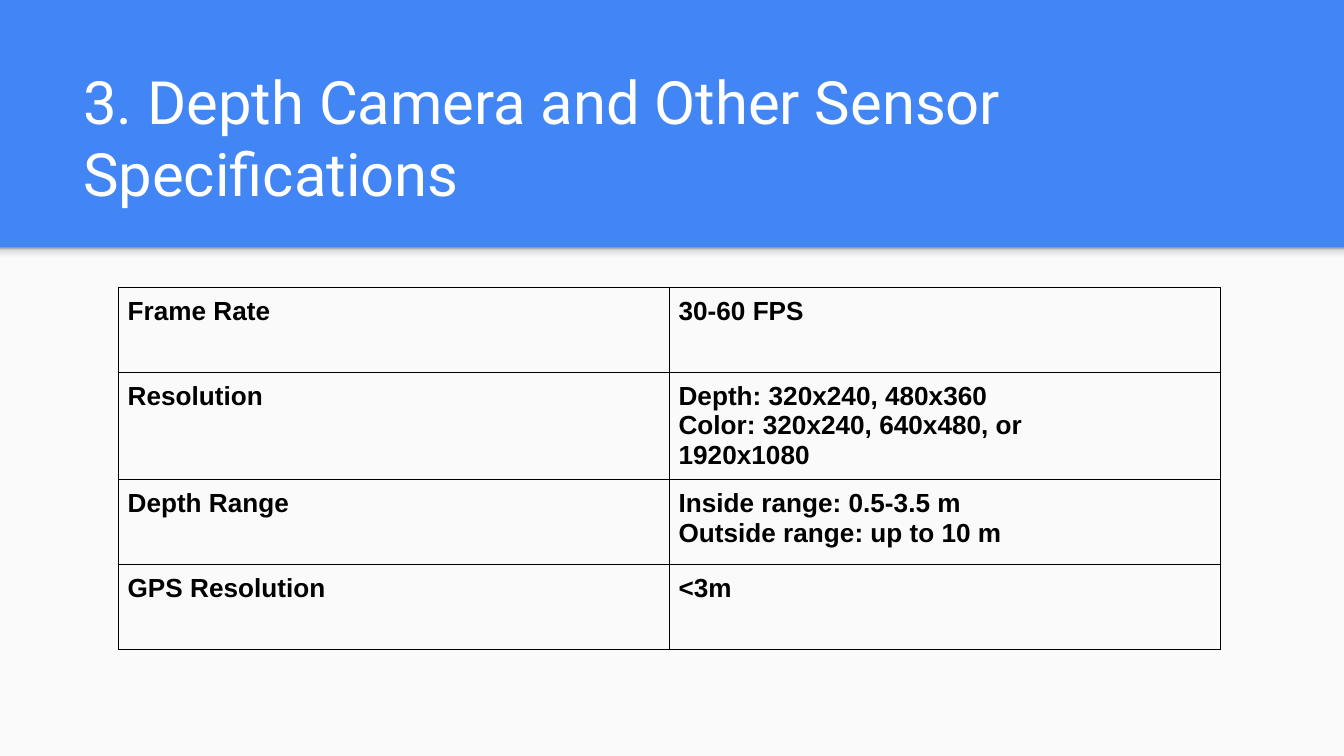
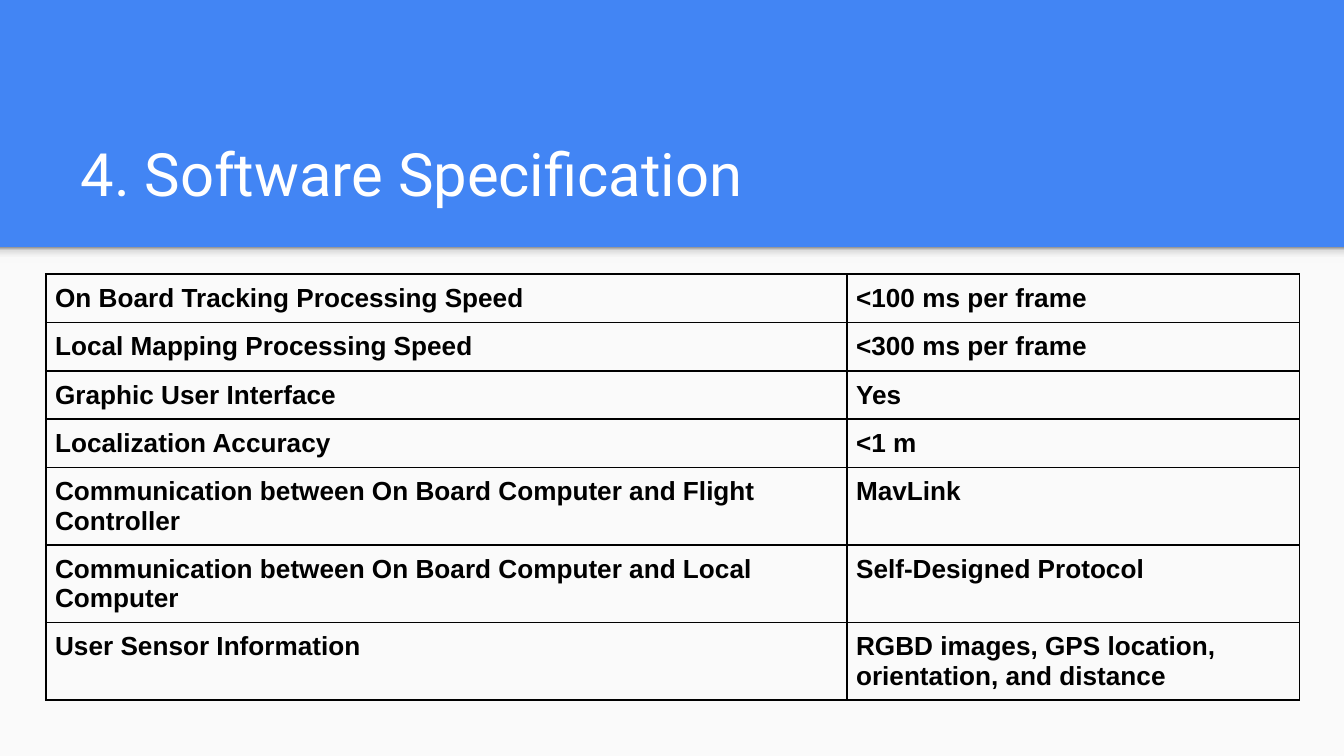
from lxml import etree
from pptx import Presentation
from pptx.dml.color import RGBColor
from pptx.enum.shapes import MSO_SHAPE
from pptx.enum.text import MSO_ANCHOR, MSO_AUTO_SIZE, PP_ALIGN
from pptx.oxml.ns import qn
from pptx.util import Inches, Pt

BLUE = RGBColor(0x42, 0x85, 0xF4)
PAPER = RGBColor(0xFA, 0xFA, 0xFA)
WHITE = RGBColor(0xFF, 0xFF, 0xFF)
BLACK = RGBColor(0x00, 0x00, 0x00)
SHADOW_STOPS = [
    (0, RGBColor(0xF9, 0xF9, 0xF9)),
    (36, RGBColor(0xF9, 0xF9, 0xF9)),
    (80, RGBColor(0xDE, 0xDE, 0xDE)),
    (100, RGBColor(0x99, 0x99, 0x99)),
]

WIDTH = 10
HEIGHT = WIDTH * 9 / 16
BAND_HEIGHT = 1.84
SHORT_ROW, TALL_ROW = 0.36, 0.57

SLIDES = [
    {
        "title": "3. Depth Camera and Other Sensor Specifications",
        "title_left": 0.52,
        "table_at": (0.88, 2.14),
        "columns": (4.1, 4.1),
        "row_heights": (0.63, 0.8, 0.63, 0.63),
        "border": 0.75,
        "rows": [
            ("Frame Rate", "30-60 FPS"),
            ("Resolution", "Depth: 320x240, 480x360\nColor: 320x240, 640x480, or\v1920x1080"),
            ("Depth Range", "Inside range: 0.5-3.5 m\nOutside range: up to 10 m"),
            ("GPS Resolution", "<3m"),
        ],
    },
    {
        "title": "4. Software Specification",
        "title_left": 0.5,
        "table_at": (0.34, 2.04),
        "columns": (5.96, 3.37),
        "row_heights": (SHORT_ROW,) * 4 + (TALL_ROW,) * 3,
        "border": 1,
        "rows": [
            ("On Board Tracking Processing Speed", "<100 ms per frame"),
            ("Local Mapping Processing Speed", "<300 ms per frame"),
            ("Graphic User Interface", "Yes"),
            ("Localization Accuracy", "<1 m"),
            ("Communication between On Board Computer and Flight Controller", "MavLink"),
            ("Communication between On Board Computer and Local Computer", "Self-Designed Protocol"),
            ("User Sensor Information", "RGBD images, GPS location, orientation, and distance"),
        ],
    },
]


def write_text(frame, text, *, font, size, color, bold=False):
    """Fill a text frame with left-aligned paragraphs in one format."""
    frame.text = text
    frame.word_wrap = True
    for paragraph in frame.paragraphs:
        paragraph.alignment = PP_ALIGN.LEFT
        paragraph.font.name = font
        paragraph.font.size = Pt(size)
        paragraph.font.bold = bold
        paragraph.font.color.rgb = color


def add_panel(slide, height):
    """Add a full-width paper rectangle below the title band."""
    panel = slide.shapes.add_shape(
        MSO_SHAPE.RECTANGLE, 0, Inches(BAND_HEIGHT), Inches(WIDTH), Inches(height)
    )
    panel.shadow.inherit = False
    panel.fill.solid()
    panel.fill.fore_color.rgb = PAPER
    panel.line.fill.background()
    return panel


def shade(shape):
    """Give a shape the gradient that looks like the shadow of the band."""
    shape.fill.gradient()
    shape.fill.gradient_angle = 90
    stops = shape.element.spPr.find(qn("a:gradFill")).find(qn("a:gsLst"))
    for stop in list(stops):
        stops.remove(stop)
    for position, color in SHADOW_STOPS:
        stop = etree.SubElement(stops, qn("a:gs"), pos=str(position * 1000))
        etree.SubElement(stop, qn("a:srgbClr"), val=str(color))


def add_backdrop(slide):
    """Paint the blue band, the paper area and the shadow between them."""
    slide.background.fill.solid()
    slide.background.fill.fore_color.rgb = BLUE
    paper = add_panel(slide, HEIGHT - BAND_HEIGHT)
    shadow = add_panel(slide, 0.12)
    shade(shadow)
    title = slide.shapes.title.element
    title.addprevious(paper.element)
    title.addprevious(shadow.element)


def set_title(slide, text, left):
    """Place and write the title, resting on the bottom of its box."""
    title = slide.shapes.title
    title.left, title.top = Inches(left), Inches(0.81)
    title.width, title.height = Inches(8.99), Inches(0.84)
    frame = title.text_frame
    write_text(frame, text, font="Roboto", size=32, color=WHITE)
    frame.auto_size = MSO_AUTO_SIZE.NONE
    frame.vertical_anchor = MSO_ANCHOR.BOTTOM
    frame.margin_left = frame.margin_right = Inches(0.1)
    frame.margin_top = frame.margin_bottom = Inches(0.1)


def set_borders(cell, width):
    """Draw a black line on all four sides of a cell."""
    properties = cell._tc.get_or_add_tcPr()
    for index, side in enumerate(("a:lnL", "a:lnR", "a:lnT", "a:lnB")):
        line = etree.Element(qn(side), w=str(Pt(width)))
        fill = etree.SubElement(line, qn("a:solidFill"))
        etree.SubElement(fill, qn("a:srgbClr"), val=str(BLACK))
        properties.insert(index, line)


def add_specifications(slide, content):
    """Add the two-column table of names and values."""
    rows, columns, heights = content["rows"], content["columns"], content["row_heights"]
    left, top = content["table_at"]
    table = slide.shapes.add_table(
        len(rows), len(columns), Inches(left), Inches(top),
        Inches(sum(columns)), Inches(sum(heights)),
    ).table
    table.first_row = table.horz_banding = False
    for column, width in zip(table.columns, columns):
        column.width = Inches(width)
    for row, height, texts in zip(table.rows, heights, rows):
        row.height = Inches(height)
        for cell, text in zip(row.cells, texts):
            write_text(cell.text_frame, text, font="Arial", size=14, color=BLACK, bold=True)
            cell.margin_left = cell.margin_right = Inches(0.07)
            cell.margin_top = cell.margin_bottom = Inches(0.07)
            cell.fill.background()
            set_borders(cell, content["border"])


def main():
    """Build and save the presentation."""
    presentation = Presentation()
    presentation.slide_width, presentation.slide_height = Inches(WIDTH), Inches(HEIGHT)
    for content in SLIDES:
        slide = presentation.slides.add_slide(presentation.slide_layouts[5])
        add_backdrop(slide)
        set_title(slide, content["title"], content["title_left"])
        add_specifications(slide, content)
    presentation.save("out.pptx")


if __name__ == "__main__":
    main()
